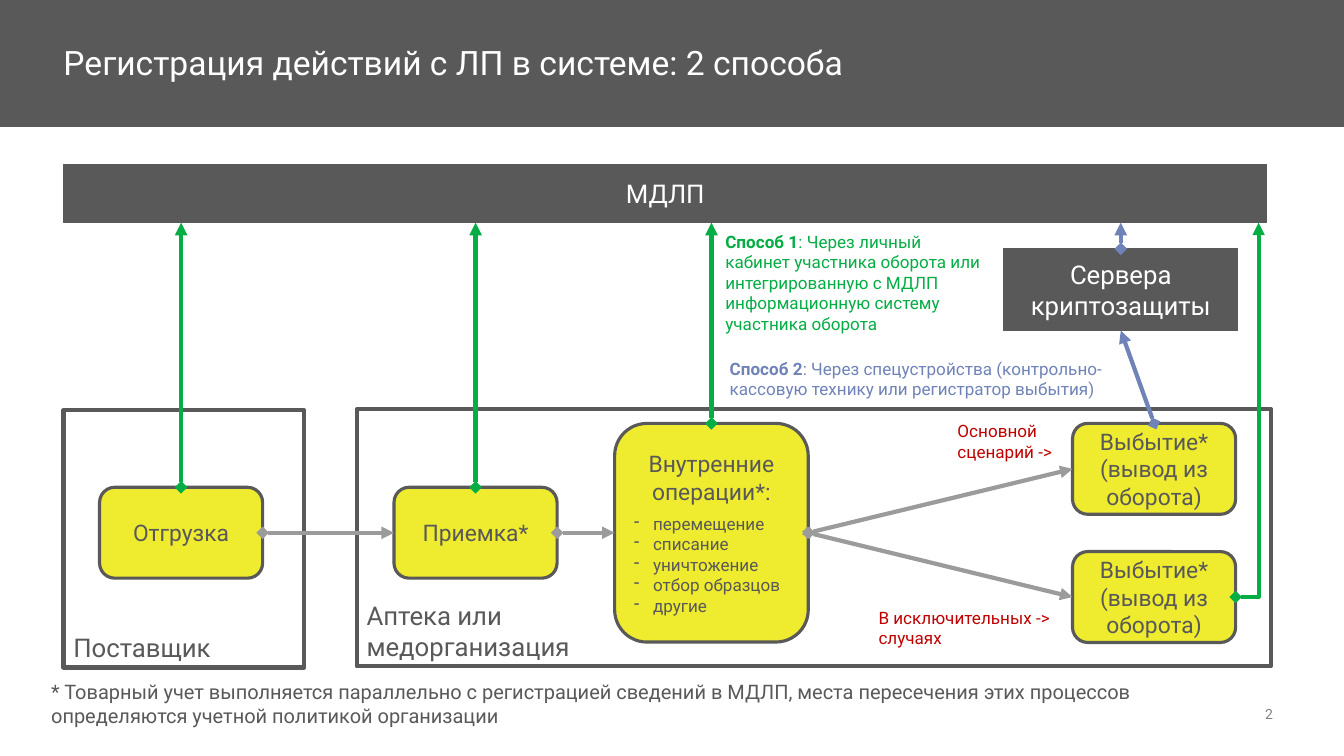
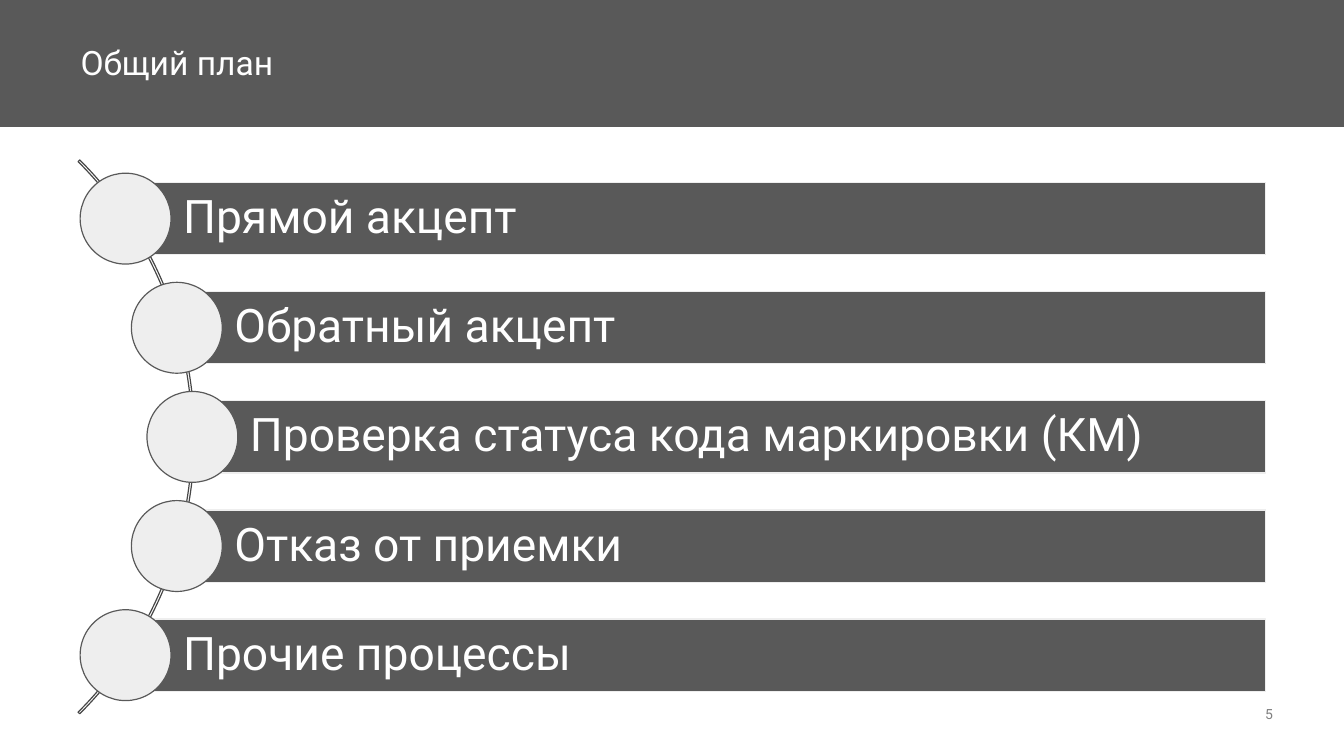
import math
from dataclasses import dataclass

import pptx
import pptx.util
import pptx.dml.color
import pptx.enum.shapes
import pptx.enum.text
import pptx.oxml
import pptx.oxml.ns

Cm, Pt = pptx.util.Cm, pptx.util.Pt
Form = pptx.enum.shapes.MSO_SHAPE
Link = pptx.enum.shapes.MSO_CONNECTOR
Side = pptx.enum.text.PP_ALIGN
Anchor = pptx.enum.text.MSO_ANCHOR


@dataclass(frozen=True)
class Theme:
    font: str = "Roboto"
    dark: str = "595959"
    white: str = "FFFFFF"
    pale: str = "EEEEEE"
    page: str = "808080"
    yellow: str = "EFEB2E"
    gray: str = "9B9B9B"
    green: str = "05AD45"
    blue: str = "7083B8"
    red: str = "C00000"
    rim: str = "474747"
    title: float = 24
    plan: float = 33
    large: float = 18.4
    step: float = 16.3
    foot: float = 14.3
    note: float = 12.2
    tiny: float = 10


T = Theme()
WIDE, HIGH = 33.87, 19.05

# Content: flow slide (boxes are left, top, width, height in cm)
FLOW = "Регистрация действий с ЛП в системе: 2 способа"
FRAMES = [
    ((1.6, 10.34, 6.07, 6.48), ["Поставщик"]),
    ((8.99, 10.31, 23.04, 6.48), ["Аптека или", "медорганизация"]),
]
BARS = {
    "hub": ((1.6, 4.14, 30.33, 1.47), "МДЛП"),
    "crypt": ((25.3, 6.27, 5.89, 2.06), "Сервера криптозащиты"),
}
OUT = ["Выбытие*", "(вывод из оборота)"]
STEP = (4.11, 2.29)
STEPS = {
    "ship": ((2.51, 12.28, *STEP), ["Отгрузка"]),
    "take": ((9.93, 12.28, *STEP), ["Приемка*"]),
    "work": ((15.49, 10.67, 4.88, 5.51), ["Внутренние операции*:"]),
    "main": ((27.03, 10.67, *STEP), OUT),
    "rare": ((27.03, 13.9, *STEP), OUT),
}
TASKS = ["перемещение", "списание", "уничтожение", "отбор образцов", "другие"]
PATHS = [
    ("ship", 3, "take", 1, T.gray),
    ("take", 3, "work", 1, T.gray),
    ("work", 3, "main", 1, T.gray),
    ("work", 3, "rare", 1, T.gray),
    ("main", 0, "crypt", 2, T.blue),
]
RISERS = [("crypt", T.blue), ("work", T.green), ("take", T.green), ("ship", T.green)]
TURN = 31.72  # x of the riser at the far right
NOTES = [
    ((23.88, 10.46, 3.1, 1.32), T.note, T.red, ["Основной", "сценарий ->"]),
    ((21.89, 15.16, 5.03, 1.32), T.note, T.red, ["В исключительных ->", "случаях"]),
    ((18.03, 5.82, 7.14, 2.59), T.note, T.green, [[
        ("Способ 1", True),
        (": Через личный кабинет участника оборота или интегрированную с МДЛП "
         "информационную систему участника оборота", False)]]),
    ((18.14, 8.86, 11, 1.37), T.note, T.blue, [[
        ("Способ 2", True),
        (": Через спецустройства (контрольно-кассовую технику или регистратор "
         "выбытия)", False)]]),
    ((1.04, 17.04, 31.01, 1.37), T.foot, T.dark, [
        "* Товарный учет выполняется параллельно с регистрацией сведений в МДЛП, "
        "места пересечения этих процессов определяются учетной политикой "
        "организации"]),
]

# Content: plan slide
PLAN = "Общий план"
ITEMS = ["Прямой акцепт", "Обратный акцепт", "Проверка статуса кода маркировки (КМ)",
         "Отказ от приемки", "Прочие процессы"]


def rgb(code):
    return pptx.dml.color.RGBColor.from_string(code)


def say(para, text, size, color):
    """Add one string, or a list of (text, bold) runs, to a paragraph."""
    for words, bold in [(text, False)] if isinstance(text, str) else text:
        run = para.add_run()
        run.text = words
        run.font.name, run.font.size, run.font.bold = T.font, Pt(size), bold
        run.font.color.rgb = rgb(color)


def fill(frame, lines, size, color, align=Side.LEFT, anchor=Anchor.MIDDLE, pad=None):
    frame.word_wrap = True
    frame.auto_size = pptx.enum.text.MSO_AUTO_SIZE.NONE
    frame.vertical_anchor = anchor
    if pad is not None:
        (frame.margin_left, frame.margin_top,
         frame.margin_right, frame.margin_bottom) = map(Cm, pad)
    for num, line in enumerate(lines):
        para = frame.add_paragraph() if num else frame.paragraphs[0]
        para.alignment = align
        say(para, line, size, color)


def block(slide, form, area, paint, edge, width):
    shape = slide.shapes.add_shape(form, *map(Cm, area))
    shape.shadow.inherit = False
    if paint:
        shape.fill.solid()
        shape.fill.fore_color.rgb = rgb(paint)
    else:
        shape.fill.background()
    shape.line.color.rgb = rgb(edge)
    shape.line.width = Pt(width)
    return shape


def label(slide, area, lines, size, color, **style):
    box = slide.shapes.add_textbox(*map(Cm, area))
    fill(box.text_frame, lines, size, color, **style)


def arrow(slide, color, start, spot, end=None, goal=None, kind=Link.STRAIGHT):
    """Link a box side to another box side, or to a free point (goal)."""
    line = slide.shapes.add_connector(kind, 0, 0, *(goal or (0, 0)))
    line.begin_connect(start, spot)
    if end is not None:
        line.end_connect(*end)
    line.line.color.rgb = rgb(color)
    line.line.width = Pt(3)
    stroke = line.line._get_or_add_ln()
    for tag, tip in (("a:headEnd", "diamond"), ("a:tailEnd", "triangle")):
        stroke.append(pptx.oxml.ns.qn(tag) and pptx.oxml.parse_xml(
            f'<{tag} {pptx.oxml.ns.nsdecls("a")} type="{tip}"/>'))
    line._element.spPr.append(
        pptx.oxml.parse_xml(f'<a:effectLst {pptx.oxml.ns.nsdecls("a")}/>'))
    return line


def dash(para, indent):
    props = para._p.get_or_add_pPr()
    props.set("marL", str(Cm(indent)))
    props.set("indent", str(-Cm(indent)))
    props.append(pptx.oxml.parse_xml(
        f'<a:buChar {pptx.oxml.ns.nsdecls("a")} char="-"/>'))


def start(deck, title, left, page):
    """Add a slide with the shared band, title and page number."""
    slide = deck.slides.add_slide(deck.slide_layouts[5])
    band = block(slide, Form.RECTANGLE, (0, 0, WIDE, 3.2), T.dark, T.dark, 0.75)
    slide.shapes._spTree.insert(2, band._element)
    head = slide.shapes.title
    head.left, head.top, head.width, head.height = map(Cm, (left, 0.7, 28, 1.86))
    fill(head.text_frame, [title], T.title, T.white, pad=(0, 0, 0, 0))
    head.text_frame.paragraphs[0].line_spacing = 0.9
    label(slide, (31.01, 17.78, 1.07, 0.43), [page], T.tiny, T.page,
          align=Side.RIGHT, anchor=Anchor.BOTTOM, pad=(0, 0, 0, 0))
    return slide


def flow(deck):
    slide = start(deck, FLOW, 1.6, "2")
    nodes = {}
    # Frames, dark bars and steps
    for area, lines in FRAMES:
        shape = block(slide, Form.RECTANGLE, area, None, T.dark, 3)
        fill(shape.text_frame, lines, T.large, T.dark, anchor=Anchor.BOTTOM)
    for key, (area, text) in BARS.items():
        nodes[key] = block(slide, Form.RECTANGLE, area, T.dark, T.dark, 0.75)
        fill(nodes[key].text_frame, [text], T.large, T.white, Side.CENTER)
    for key, (area, lines) in STEPS.items():
        nodes[key] = block(slide, Form.ROUNDED_RECTANGLE, area, T.yellow, T.dark, 2.25)
        fill(nodes[key].text_frame, lines, T.step, T.dark, Side.CENTER)
    # Dashed list inside the middle step
    for num, task in enumerate(TASKS):
        para = nodes["work"].text_frame.add_paragraph()
        para.alignment = Side.LEFT
        para.space_before = Pt(0 if num else 6.1)
        dash(para, 0.48)
        say(para, task, T.note, T.dark)
    # Arrows between boxes, then up to the hub
    for here, spot, there, goal, color in PATHS:
        arrow(slide, color, nodes[here], spot, (nodes[there], goal))
    hub = nodes["hub"]
    base = hub.top + hub.height
    for key, color in RISERS:
        node = nodes[key]
        arrow(slide, color, node, 0, goal=(node.left + node.width // 2, base))
    bend = arrow(slide, T.green, nodes["rare"], 3, goal=(Cm(TURN), base),
                 kind=Link.ELBOW)
    bend._element.spPr.find(pptx.oxml.ns.qn("a:prstGeom")).set("prst", "bentConnector2")
    # Notes
    for area, size, color, lines in NOTES:
        label(slide, area, lines, size, color)


def plan(deck):
    slide = start(deck, PLAN, 2.03, "5")
    # Arc that carries the dots
    midx, midy, reach, rim = -4.97, 11.01, 9.82, 9.87
    arc = block(slide, Form.BLOCK_ARC, (midx - rim, midy - rim, 2 * rim, 2 * rim),
                None, T.rim, 0.85)
    for num, value in enumerate((189, 27, 0.003)):
        arc.adjustments[num] = value
    # Bars start at the dot centres, which lie on the arc
    gap, tall, dot, right = 2.75, 1.82, 2.29, 31.9
    for num, item in enumerate(ITEMS):
        rise = (num - (len(ITEMS) - 1) / 2) * gap
        x, y = midx + math.sqrt(reach ** 2 - rise ** 2), midy + rise
        bar = block(slide, Form.RECTANGLE, (x, y - tall / 2, right - x, tall),
                    T.dark, T.pale, 0.85)
        fill(bar.text_frame, [item], T.plan, T.white, pad=(1.45, 0.23, 0.23, 0.23))
        bar.text_frame.paragraphs[0].line_spacing = 0.9
        block(slide, Form.OVAL, (x - dot / 2, y - dot / 2, dot, dot),
              T.pale, T.dark, 0.85)


def main():
    deck = pptx.Presentation()
    deck.slide_width, deck.slide_height = Cm(WIDE), Cm(HIGH)
    flow(deck)
    plan(deck)
    deck.save("out.pptx")


if __name__ == "__main__":
    main()
